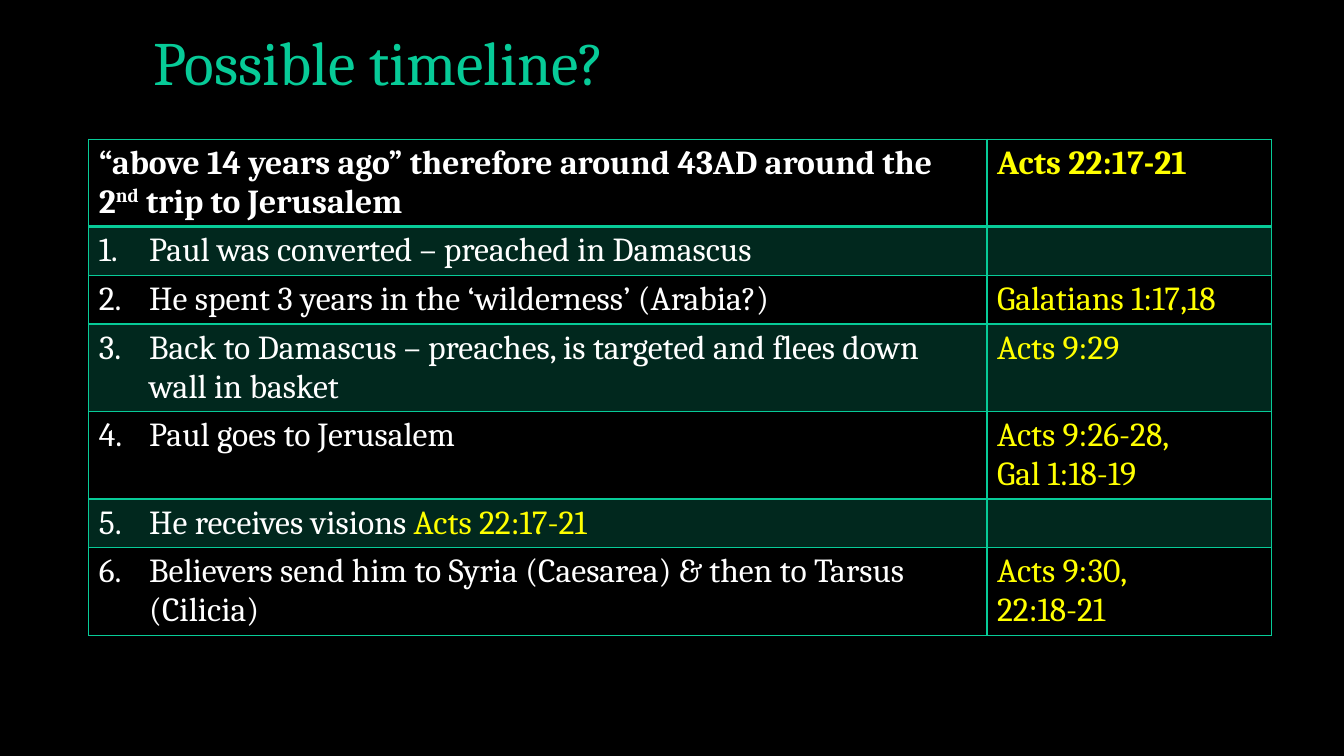
from lxml.etree import SubElement
from pptx import Presentation
from pptx.dml.color import RGBColor
from pptx.enum.text import MSO_ANCHOR, MSO_AUTO_SIZE, PP_ALIGN
from pptx.oxml.ns import qn
from pptx.util import Inches, Pt

GREEN, WHITE, YELLOW = "07CB98", "FFFFFF", "FFFF00"
HEAD = [
    ("“above 14 years ago” therefore around 43AD around the 2", {}),
    ("nd", {"base": 30}),
    (" trip to Jerusalem", {}),
]
STEPS = [
    ([("Paul was converted – preached in Damascus", {})], [], 1),
    ([("He spent 3 years in the ‘wilderness’ (Arabia?)", {})], ["Galatians 1:17,18"], 1),
    ([("Back to Damascus – preaches, is targeted and flees down wall in basket", {})],
     ["Acts 9:29"], 2),
    ([("Paul goes to Jerusalem", {})], ["Acts 9:26-28,", "Gal 1:18-19"], 2),
    ([("He receives visions ", {}), ("Acts 22:17-21", {"color": YELLOW})], [], 1),
    ([("Believers send him to Syria (Caesarea) & then to Tarsus (Cilicia)", {})],
     ["Acts 9:30,", "22:18-21"], 2),
]


def paint(text):
    return RGBColor.from_string(text)


def write(para, text, size=24, color=WHITE, bold=False, base=0):
    run = para.add_run()
    run.text = text
    font = run.font
    font.name, font.size, font.bold = "Cambria", Pt(size), bold
    font.color.rgb = paint(color)
    if base:
        font._element.set("baseline", str(base * 1000))


def number(para, start):
    props = para._p.get_or_add_pPr()
    props.set("marL", str(Inches(0.5)))
    props.set("indent", str(-Inches(0.5)))
    SubElement(props, qn("a:buFont"), typeface="+mj-lt")
    SubElement(props, qn("a:buAutoNum"), type="arabicPeriod", startAt=str(start))


def style(cell, row):
    props = cell._tc.get_or_add_tcPr()
    for side in "LRTB":
        thick = (row, side) in ((0, "B"), (1, "T"))
        line = SubElement(props, qn("a:ln" + side), w=str(Pt(2 if thick else 1)))
        fill = SubElement(line, qn("a:solidFill"))
        SubElement(fill, qn("a:srgbClr"), val=GREEN)
    if row % 2:
        cell.fill.solid()
        cell.fill.fore_color.rgb = paint(GREEN)
        tint = props.find(qn("a:solidFill")).find(qn("a:srgbClr"))
        SubElement(tint, qn("a:alpha"), val="20000")
    else:
        cell.fill.background()


def title(slide, left, top, width, height):
    shape = slide.shapes.title
    shape.left, shape.top = Inches(left), Inches(top)
    shape.width, shape.height = Inches(width), Inches(height)
    frame = shape.text_frame
    frame.auto_size = MSO_AUTO_SIZE.NONE
    frame.vertical_anchor = MSO_ANCHOR.BOTTOM
    para = frame.paragraphs[0]
    para.alignment, para.line_spacing = PP_ALIGN.LEFT, 0.9
    write(para, "Possible timeline?", size=44, color=GREEN)


def events(slide, left, top, width, height):
    rows = [(HEAD, ["Acts 22:17-21"], 2)] + STEPS
    frame = slide.shapes.add_table(len(rows), 2, Inches(left), Inches(top),
                                   Inches(width), Inches(height))
    table = frame.table
    table.first_row = table.horz_banding = False
    refs = 2.82
    table.columns[0].width = Inches(width - refs)
    table.columns[1].width = Inches(refs)
    pad = 0.1
    step = (height - pad * len(rows)) / sum(lines for _, _, lines in rows)
    for row, (parts, verses, lines) in enumerate(rows):
        table.rows[row].height = Inches(pad + lines * step)
        event, verse = table.cell(row, 0), table.cell(row, 1)
        style(event, row)
        style(verse, row)
        para = event.text_frame.paragraphs[0]
        if row:
            number(para, row)
        for text, form in parts:
            write(para, text, bold=row == 0, **form)
        for place, text in enumerate(verses):
            body = verse.text_frame
            para = body.add_paragraph() if place else body.paragraphs[0]
            write(para, text, color=YELLOW, bold=row == 0)


def main():
    deck = Presentation()
    deck.slide_width, deck.slide_height = Inches(13.33), Inches(7.5)
    slide = deck.slides.add_slide(deck.slide_layouts[5])
    back = slide.background.fill
    back.solid()
    back.fore_color.rgb = paint("000000")
    title(slide, 1.42, -0.14, 10.5, 1.17)
    events(slide, 0.88, 1.38, 11.73, 4.92)
    deck.save("out.pptx")


if __name__ == "__main__":
    main()
